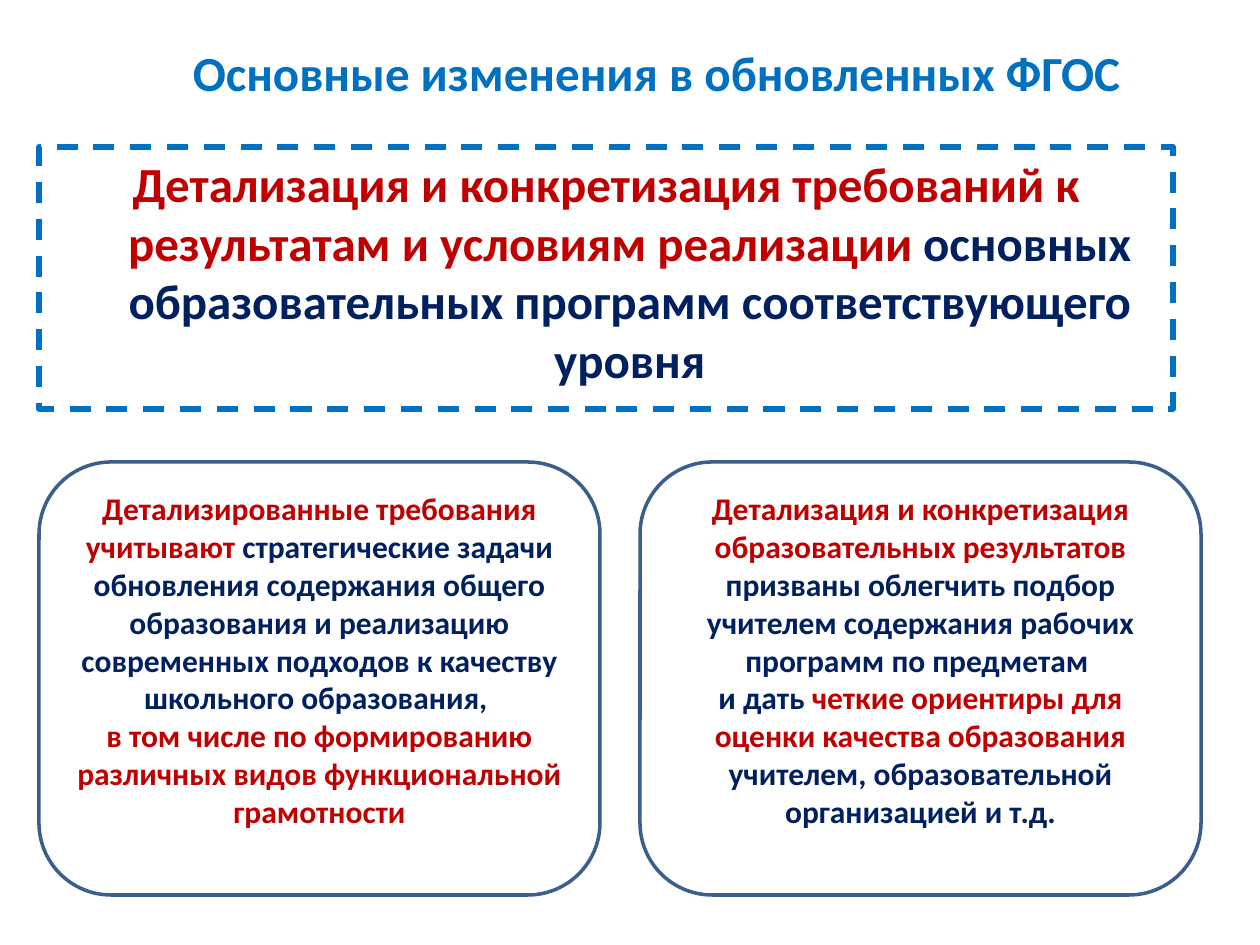
from dataclasses import dataclass
from typing import Optional

from lxml import etree
from pptx import Presentation
from pptx.dml.color import RGBColor
from pptx.enum.dml import MSO_LINE
from pptx.enum.shapes import MSO_SHAPE
from pptx.enum.text import MSO_ANCHOR, MSO_AUTO_SIZE, PP_ALIGN
from pptx.oxml.ns import qn
from pptx.util import Emu, Pt

BLUE = RGBColor(0x00, 0x70, 0xC0)
RED = RGBColor(0xC0, 0x00, 0x00)
NAVY = RGBColor(0x00, 0x20, 0x60)
STEEL = RGBColor(0x3A, 0x5F, 0x8C)
WHITE = RGBColor(0xFF, 0xFF, 0xFF)

DASH = MSO_LINE.DASH
ROUNDED = MSO_SHAPE.ROUNDED_RECTANGLE
MIDDLE = MSO_ANCHOR.MIDDLE
TOP = MSO_ANCHOR.TOP
NO_AUTOFIT = MSO_AUTO_SIZE.NONE
CENTER = PP_ALIGN.CENTER

FONT = "Calibri"
PX_PER_INCH = 126
CARD_TOP, CARD_WIDTH, CARD_HEIGHT = 462, 561, 433


@dataclass(frozen=True)
class Span:
    text: str
    color: RGBColor
    break_after: bool = False


@dataclass(frozen=True)
class Card:
    left: int
    fill: Optional[RGBColor]
    spans: tuple[Span, ...]


TITLE = (Span("Основные изменения в обновленных ФГОС", BLUE),)
THESIS = (
    Span("Детализация и конкретизация требований к результатам и условиям реализации ", RED),
    Span("основных образовательных программ соответствующего уровня", NAVY),
)
CARDS = (
    Card(39, None, (
        Span("Детализированные требования учитывают ", RED),
        Span("стратегические задачи обновления содержания общего образования и реализацию "
             "современных подходов к качеству школьного образования, ", NAVY, True),
        Span("в том числе по формированию различных видов функциональной грамотности", RED),
    )),
    Card(640, WHITE, (
        Span("Детализация и конкретизация образовательных результатов ", RED),
        Span("призваны облегчить подбор учителем содержания рабочих программ по предметам ",
             NAVY, True),
        Span("и дать ", NAVY),
        Span("четкие ориентиры для оценки качества образования ", RED),
        Span("учителем, образовательной организацией и т.д.", NAVY),
    )),
)


def px(n: int) -> Emu:
    return Emu(round(n * 914400 / PX_PER_INCH))


def place(sp, left: int, top: int, width: int, height: int) -> None:
    sp.left, sp.top, sp.width, sp.height = map(px, (left, top, width, height))


def write(sp, spans: tuple[Span, ...], size: int, anchor):
    tf = sp.text_frame
    tf.word_wrap = True
    tf.auto_size = NO_AUTOFIT
    tf.vertical_anchor = anchor
    p = tf.paragraphs[0]
    p.alignment = CENTER
    for span in spans:
        r = p.add_run()
        r.text = span.text
        r.font.name = FONT
        r.font.size = Pt(size)
        r.font.bold = True
        r.font.color.rgb = span.color
        if span.break_after:
            p.add_line_break()
    return tf


def add_card(s, card: Card) -> None:
    sp = s.shapes.add_shape(
        ROUNDED, px(card.left), px(CARD_TOP), px(CARD_WIDTH), px(CARD_HEIGHT))
    sp.shadow.inherit = False
    if card.fill is None:
        sp.fill.background()
    else:
        sp.fill.solid()
        sp.fill.fore_color.rgb = card.fill
    sp.line.color.rgb = STEEL
    sp.line.width = Pt(2)
    tf = write(sp, card.spans, 18, MIDDLE)
    tf.margin_bottom = px(44)


def main() -> None:
    prs = Presentation()
    prs.slide_width, prs.slide_height = px(1260), px(945)
    s = prs.slides.add_slide(prs.slide_layouts[1])

    title = s.shapes.title
    place(title, 63, 29, 1197, 81)
    tf = write(title, TITLE, 28, MIDDLE)
    tf.margin_top, tf.margin_right = px(12), px(23)

    body = s.placeholders[1]
    place(body, 39, 147, 1134, 262)
    body.line.color.rgb = BLUE
    body.line.width = Pt(3)
    body.line.dash_style = DASH
    tf = write(body, THESIS, 28, TOP)
    etree.SubElement(tf.paragraphs[0]._p.get_or_add_pPr(), qn("a:buNone"))

    for card in CARDS:
        add_card(s, card)

    prs.save("out.pptx")


if __name__ == "__main__":
    main()
